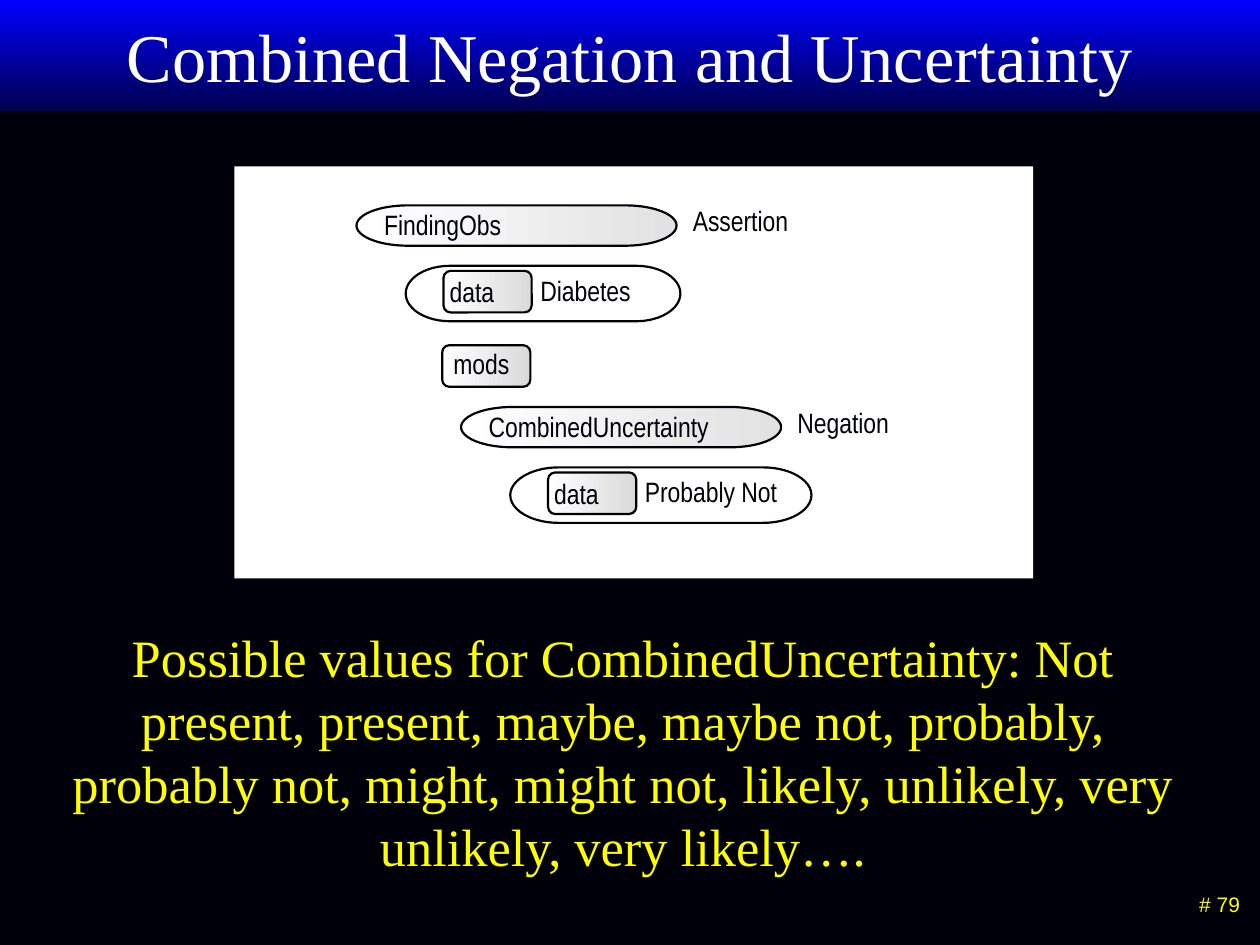
from dataclasses import dataclass

from pptx import Presentation
from pptx.dml.color import RGBColor
from pptx.enum.shapes import MSO_SHAPE
from pptx.enum.text import MSO_ANCHOR, PP_ALIGN
from pptx.util import Inches, Pt

RECT = MSO_SHAPE.RECTANGLE
ROUND = MSO_SHAPE.ROUNDED_RECTANGLE
PILL = MSO_SHAPE.FLOWCHART_TERMINATOR
TOP = MSO_ANCHOR.TOP
LEFT, MID, RIGHT = PP_ALIGN.LEFT, PP_ALIGN.CENTER, PP_ALIGN.RIGHT


@dataclass(frozen=True)
class Theme:
    ink: str = "00000A"
    edge: str = "000000"
    white: str = "FFFFFF"
    yellow: str = "FFFF00"
    navy: str = "00004F"
    blue: str = "0000FF"
    pale: str = "E2E2E2"
    gray: str = "DADADA"
    serif: str = "Times New Roman"
    sans: str = "Arial"
    narrow: str = "Arial Narrow"
    title: float = 39
    body: float = 30
    lead: float = 36
    label: float = 16
    small: float = 12
    line: float = 1.25


@dataclass(frozen=True)
class Box:
    x: float
    y: float
    w: float
    h: float

    def lengths(self) -> tuple:
        return tuple(Inches(v) for v in (self.x, self.y, self.w, self.h))


@dataclass(frozen=True)
class Node:
    """A named observation with its kind beside it and its value below."""
    x: float
    y: float
    name: str
    kind: str
    value: str
    width: float


THEME = Theme()
NODES = (
    Node(2.83, 1.63, "FindingObs", "Assertion", "Diabetes", 2.18),
    Node(3.66, 3.23, "CombinedUncertainty", "Negation", "Probably Not", 2.39),
)
VALUES = (
    "Possible values for CombinedUncertainty: Not present, present, maybe, "
    "maybe not, probably, probably not, might, might not, likely, unlikely, "
    "very unlikely, very likely…."
)


def color(code: str) -> RGBColor:
    return RGBColor.from_string(code)


def add_form(slide, preset, box: Box, fills: tuple, edge: str = "", angle: float = 0):
    """Draw a preset shape; two fills make a gradient."""
    form = slide.shapes.add_shape(preset, *box.lengths())
    form.shadow.inherit = False
    if len(fills) == 1:
        form.fill.solid()
        form.fill.fore_color.rgb = color(fills[0])
    else:
        form.fill.gradient()
        form.fill.gradient_angle = angle
        for stop, code in zip(form.fill.gradient_stops, fills):
            stop.color.rgb = color(code)
    if edge:
        form.line.color.rgb = color(edge)
        form.line.width = Pt(THEME.line)
    else:
        form.line.fill.background()
    return form


def set_text(frame, text: str, size: float, face: str, code: str, align=LEFT):
    frame.word_wrap = True
    frame.vertical_anchor = TOP
    para = frame.paragraphs[0]
    para.text = text
    para.alignment = align
    para.font.size = Pt(size)
    para.font.name = face
    para.font.color.rgb = color(code)
    return para


def add_text(slide, box: Box, text: str, size: float, face: str, code: str, align=LEFT):
    frame = slide.shapes.add_textbox(*box.lengths()).text_frame
    return set_text(frame, text, size, face, code, align)


def add_label(slide, x: float, y: float, w: float, text: str) -> None:
    add_text(slide, Box(x, y, w, 0.37), text, THEME.label, THEME.narrow, THEME.ink)


def add_tag(slide, x: float, y: float) -> None:
    tag = add_form(slide, ROUND, Box(x, y, 0.7, 0.33),
                   (THEME.white, THEME.gray), THEME.edge)
    tag.adjustments[0] = 0.17


def add_node(slide, node: Node) -> None:
    x, y = node.x, node.y
    add_form(slide, PILL, Box(x + 0.39, y + 0.48, node.width, 0.44),
             (THEME.white,), THEME.ink)
    add_tag(slide, x + 0.69, y + 0.52)
    add_label(slide, x + 0.64, y + 0.5, 0.65, "data")
    add_label(slide, x + 1.36, y + 0.49, 1.54, node.value)
    add_label(slide, x + 2.57, y - 0.06, 1.59, node.kind)
    add_form(slide, PILL, Box(x, y, 2.54, 0.32),
             (THEME.white, THEME.pale), THEME.ink)
    add_label(slide, x + 0.12, y - 0.03, 2.2, node.name)


def add_title(slide, text: str) -> None:
    title = slide.shapes.title
    title.left, title.top, title.width, title.height = Box(0.75, 0, 8.5, 1.25).lengths()
    set_text(title.text_frame, text, THEME.title, THEME.serif, THEME.white, MID)
    title.text_frame.margin_top = Inches(0.11)
    # Bring the title in front of the header band
    slide.shapes.element.append(title.element)


def main() -> None:
    deck = Presentation()
    deck.slide_width, deck.slide_height = Inches(10), Inches(7.5)
    slide = deck.slides.add_slide(deck.slide_layouts[5])
    slide.background.fill.solid()
    slide.background.fill.fore_color.rgb = color(THEME.ink)

    add_form(slide, RECT, Box(0, 0, 10, 0.88), (THEME.navy, THEME.blue), angle=90)
    add_text(slide, Box(8.9, 7.03, 1.04, 0.34), "# 79",
             THEME.small, THEME.sans, THEME.yellow, RIGHT)
    add_form(slide, RECT, Box(1.86, 1.32, 6.34, 3.27), (THEME.white,))
    add_title(slide, "Combined Negation and Uncertainty")

    for node in NODES:
        add_node(slide, node)
    add_tag(slide, 3.51, 2.74)
    add_label(slide, 3.5, 2.7, 0.75, "mods")

    para = add_text(slide, Box(0.29, 4.91, 9.31, 2.1), VALUES,
                    THEME.body, THEME.serif, THEME.yellow, MID)
    para.line_spacing = Pt(THEME.lead)
    deck.save("out.pptx")


if __name__ == "__main__":
    main()
